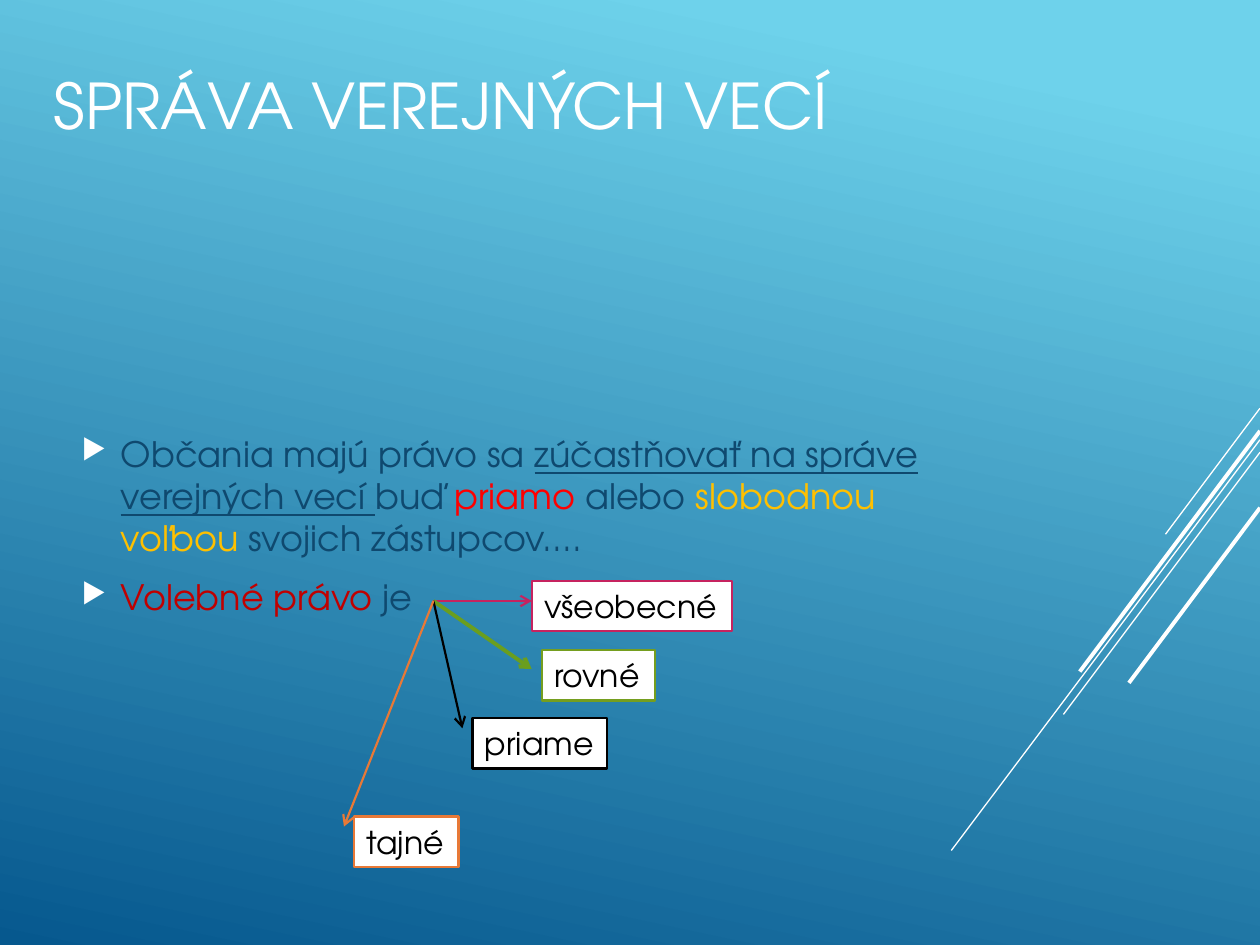
import pptx
import pptx.util
import pptx.dml.color
import pptx.enum.shapes
import pptx.enum.text
import pptx.oxml
import pptx.oxml.ns

Inches, Pt = pptx.util.Inches, pptx.util.Pt
ALIGN = pptx.enum.text.PP_ALIGN
ANCHOR = pptx.enum.text.MSO_ANCHOR
NS = pptx.oxml.ns.nsdecls("a")

THEME = {
    "font": "TeX Gyre Adventor",
    "title": 36, "body": 20, "label": 18,
    "thin": 0.75, "mid": 1.25, "thick": 2.25,
    "sky": "6ED2EB", "deep": "06588E", "white": "FFFFFF", "black": "000000",
    "navy": "0F496F", "red": "FF0000", "gold": "FFC000", "wine": "C00000",
    "pink": "C6235F", "green": "6A9E1F", "olive": "759E1F", "orange": "E87937",
}

TITLE = [[("SPRÁVA VEREJNÝCH VECÍ", "white", False)]]
BODY = [
    [
        ("Občania majú právo sa ", "navy", False),
        ("zúčastňovať na správe verejných vecí ", "navy", True),
        ("buď ", "navy", False),
        ("priamo", "red", False),
        (" alebo ", "navy", False),
        ("slobodnou voľbou ", "gold", False),
        ("svojich zástupcov....", "navy", False),
    ],
    [("Volebné právo ", "wine", False), ("je", "navy", False)],
]
RAYS = [
    (3.24, 9.25, 4.24, "thin"),
    (3.49, 7.55, 6.75, "thin"),
    (3.59, 8.44, 5.67, "thin"),
    (3.42, 8.57, 5.33, "thick"),
    (4.03, 8.96, 5.42, "thick"),
]
HUB = (3.44, 4.77)
ARROWS = [
    ((4.22, 4.77), "pink", "mid"),
    ((4.22, 5.31), "green", "thick"),
    ((3.67, 5.78), "black", "mid"),
    ((2.73, 6.56), "orange", "mid"),
]
LABELS = [
    ("všeobecné", 4.22, 4.61, 1.59, "pink"),
    ("rovné", 4.3, 5.16, 0.9, "olive"),
    ("priame", 3.75, 5.7, 1.07, "black"),
    ("tajné", 2.81, 6.48, 0.83, "orange"),
]


def color(name):
    return pptx.dml.color.RGBColor.from_string(THEME[name])


def add_bullet(para):
    props = para._p.get_or_add_pPr()
    props.set("marL", str(Inches(0.31)))
    props.set("indent", str(Inches(-0.31)))
    for xml in (
        f'<a:buClr {NS}><a:srgbClr val="{THEME["white"]}"/></a:buClr>',
        f'<a:buSzPct {NS} val="80000"/>',
        f'<a:buChar {NS} char="▶"/>',
    ):
        props.append(pptx.oxml.parse_xml(xml))


def put_text(shape, paras, size, align=ALIGN.LEFT, wrap=True, bullet=False):
    frame = shape.text_frame
    frame.word_wrap = wrap
    frame.vertical_anchor = ANCHOR.MIDDLE
    if not wrap:
        frame.auto_size = pptx.enum.text.MSO_AUTO_SIZE.SHAPE_TO_FIT_TEXT
    for i, runs in enumerate(paras):
        para = frame.add_paragraph() if i else frame.paragraphs[0]
        para.alignment = align
        if bullet:
            add_bullet(para)
            para.space_before = Pt(4 if i else 0)
            para.space_after = Pt(6)
        for words, tint, under in runs:
            run = para.add_run()
            run.text = words
            run.font.name = THEME["font"]
            run.font.size = Pt(THEME[size])
            run.font.color.rgb = color(tint)
            if under:
                run.font.underline = True


def add_line(shapes, start, end, tint, width, arrow=False):
    line = shapes.add_connector(
        pptx.enum.shapes.MSO_CONNECTOR.STRAIGHT, *map(Inches, start + end))
    line.line.color.rgb = color(tint)
    line.line.width = Pt(THEME[width])
    if arrow:
        line.line._get_or_add_ln().append(
            pptx.oxml.parse_xml(f'<a:tailEnd {NS} type="arrow"/>'))
    line._element.spPr.append(pptx.oxml.parse_xml(f"<a:effectLst {NS}/>"))


def add_label(shapes, words, left, top, width, tint):
    box = shapes.add_shape(
        pptx.enum.shapes.MSO_SHAPE.RECTANGLE,
        *map(Inches, (left, top, width, 0.4)))
    box.shadow.inherit = False
    box.fill.solid()
    box.fill.fore_color.rgb = color("white")
    box.line.color.rgb = color(tint)
    box.line.width = Pt(THEME["mid"])
    put_text(box, [[(words, "black", False)]], "label", wrap=False)


def paint(slide):
    fill = slide.background.fill
    fill.gradient()
    fill.gradient_angle = 360 - 102
    for stop, tint, spot in zip(fill.gradient_stops, ("sky", "deep"), (0.1, 1)):
        stop.color.rgb = color(tint)
        stop.position = spot


def main():
    deck = pptx.Presentation()
    deck.slide_width, deck.slide_height = Inches(10), Inches(7.5)
    slide = deck.slides.add_slide(deck.slide_layouts[6])
    shapes = slide.shapes
    paint(slide)
    for top, x, y, width in RAYS:
        add_line(shapes, (10, top), (x, y), "white", width)
    title = shapes.add_textbox(*map(Inches, (0, 0, 7, 1.65)))
    put_text(title, TITLE, "title", align=ALIGN.CENTER)
    body = shapes.add_textbox(*map(Inches, (0.55, 2.19, 7, 3.95)))
    put_text(body, BODY, "body", bullet=True)
    for end, tint, width in ARROWS:
        add_line(shapes, HUB, end, tint, width, arrow=True)
    for label in LABELS:
        add_label(shapes, *label)
    deck.save("out.pptx")


if __name__ == "__main__":
    main()
